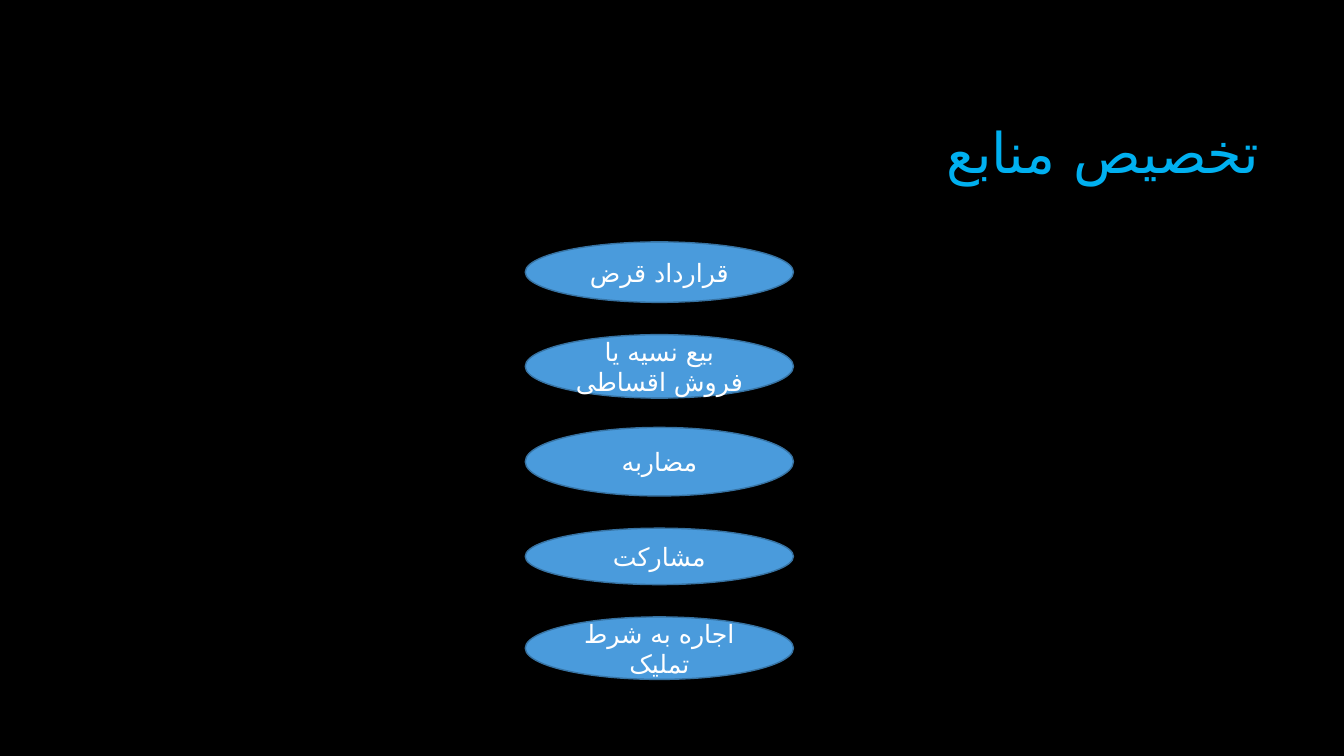
from dataclasses import dataclass

from lxml.etree import SubElement
from pptx import Presentation
from pptx.dml.color import RGBColor
from pptx.enum.shapes import MSO_SHAPE
from pptx.enum.text import MSO_ANCHOR, MSO_AUTO_SIZE, PP_ALIGN
from pptx.oxml.ns import qn
from pptx.util import Emu, Pt

EMU_PER_PX = 9144  # 100 px to the inch


@dataclass(frozen=True)
class Theme:
    background: RGBColor = RGBColor(0x00, 0x00, 0x00)
    title: RGBColor = RGBColor(0x00, 0xB0, 0xF0)
    fill: RGBColor = RGBColor(0x4A, 0x9B, 0xDC)
    outline: RGBColor = RGBColor(0x37, 0x73, 0xA3)
    label: RGBColor = RGBColor(0xFF, 0xFF, 0xFF)
    font: str = "Quicksand"
    persian_font: str = "DejaVu Sans"  # Quicksand has no Persian letters
    title_size: int = 40
    label_size: int = 18


@dataclass(frozen=True)
class Contract:
    label: str
    top: int
    height: int


THEME = Theme()
OVAL_LEFT, OVAL_WIDTH = 521, 266
CONTRACTS = [
    Contract("قرارداد قرض", 240, 60),
    Contract("بیع نسیه یا فروش اقساطی", 332, 63),
    Contract("مضاربه", 424, 68),
    Contract("مشارکت", 524, 56),
    Contract("اجاره به شرط تملیک", 612, 62),
]


def px(n: int) -> Emu:
    return Emu(n * EMU_PER_PX)


def write_text(shape, text: str, size: int, color: RGBColor, align: PP_ALIGN):
    """Write one vertically centred paragraph and return it."""
    tf = shape.text_frame
    frame_format = {
        "word_wrap": True,
        "auto_size": MSO_AUTO_SIZE.NONE,
        "vertical_anchor": MSO_ANCHOR.MIDDLE,
    }
    for name, value in frame_format.items():
        setattr(tf, name, value)
    p = tf.paragraphs[0]
    p.alignment = align
    r = p.add_run()
    r.text = text
    for name, value in {"name": THEME.font, "size": Pt(size)}.items():
        setattr(r.font, name, value)
    r.font.color.rgb = color
    # Persian letters take the complex-script font
    SubElement(r.font._element, qn("a:cs"), typeface=THEME.persian_font)
    return p


def add_title(s, text: str) -> None:
    title = s.shapes.title
    box = {"left": 317, "top": 84, "width": 942, "height": 141}
    for name, value in box.items():
        setattr(title, name, px(value))
    p = write_text(title, text, THEME.title_size, THEME.title, PP_ALIGN.RIGHT)
    p.line_spacing = 0.9
    p._p.get_or_add_pPr().set("rtl", "1")


def add_contract(s, contract: Contract) -> None:
    sp = s.shapes.add_shape(
        MSO_SHAPE.OVAL,
        px(OVAL_LEFT), px(contract.top), px(OVAL_WIDTH), px(contract.height),
    )
    sp.shadow.inherit = False
    sp.fill.solid()
    sp.fill.fore_color.rgb = THEME.fill
    sp.line.color.rgb = THEME.outline
    sp.line.width = Pt(1)
    write_text(sp, contract.label, THEME.label_size, THEME.label, PP_ALIGN.CENTER)


def main() -> None:
    prs = Presentation()
    prs.slide_width, prs.slide_height = px(1333), px(750)

    # Title-only slide on a plain background
    s = prs.slides.add_slide(prs.slide_layouts[5])
    s.background.fill.solid()
    s.background.fill.fore_color.rgb = THEME.background

    # Title and the column of contract types
    add_title(s, "تخصیص منابع")
    for contract in CONTRACTS:
        add_contract(s, contract)

    prs.save("out.pptx")


if __name__ == "__main__":
    main()
